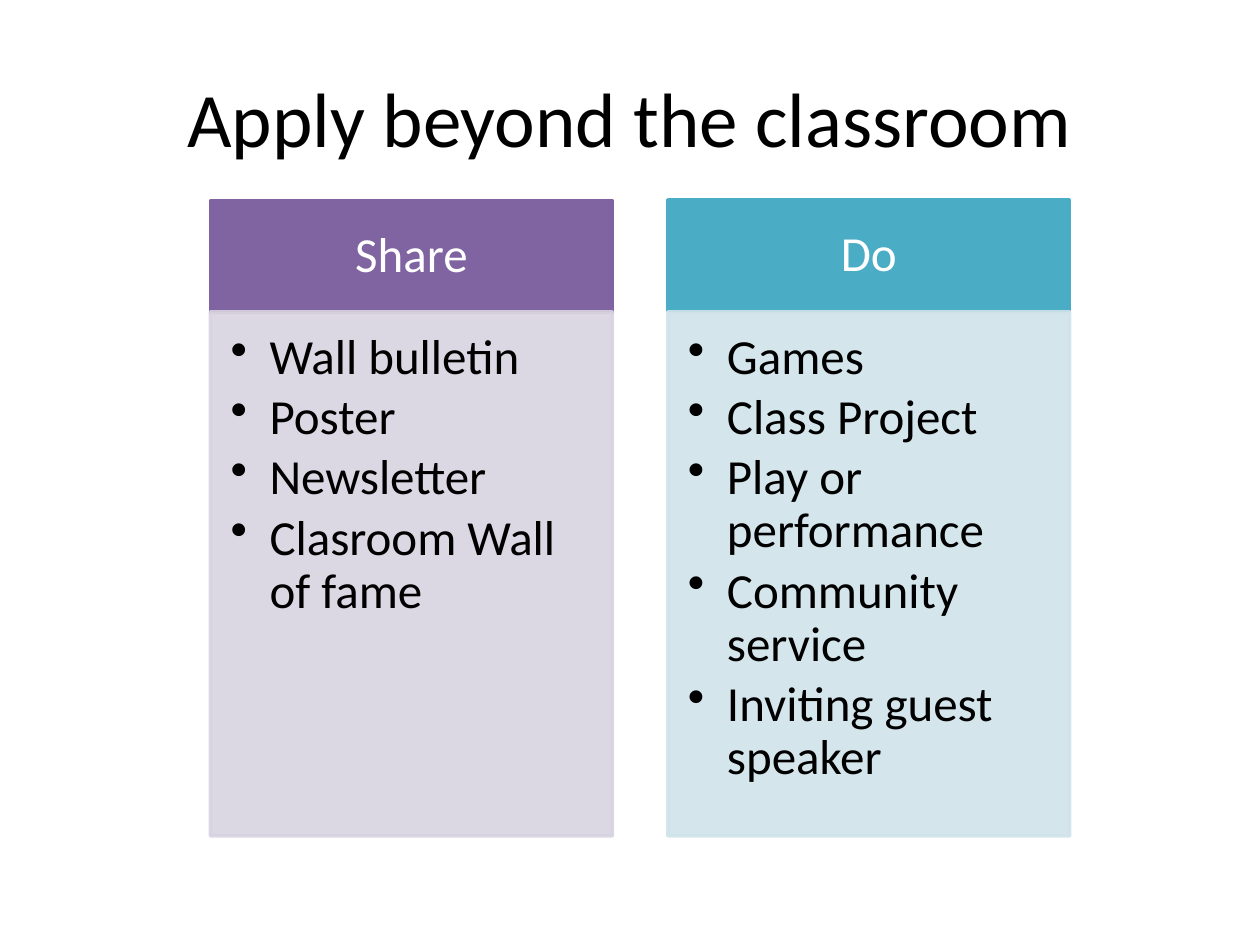
from lxml.etree import SubElement as Sub
from pptx import Presentation
from pptx.dml.color import RGBColor as Rgb
from pptx.enum.shapes import MSO_SHAPE as Kind
from pptx.enum.text import MSO_ANCHOR as Anchor, PP_ALIGN as Align
from pptx.oxml.ns import qn
from pptx.util import Inches as In, Pt

WIDE, HIGH = 10, 7.5
LEFT, STEP, SPAN = WIDE * 0.167, WIDE * 0.363, WIDE * 0.319
HEAD, BODY = 0.88, 4.16
BASE = HIGH * 0.33
FONT = "Calibri"
HUES = {
    "ink": "000000", "white": "FFFFFF",
    "plum": "8064A2", "lilac": "D8D3E0",
    "teal": "4BACC6", "ice": "D0E3EA",
}
COLS = [
    ("Share", "plum", "lilac", 0,
     ["Wall bulletin", "Poster", "Newsletter", "Clasroom Wall of fame"]),
    ("Do", "teal", "ice", 0.01,
     ["Games", "Class Project", "Play or performance",
      "Community service", "Inviting guest speaker"]),
]


def color(name):
    """Return the named colour."""
    return Rgb.from_string(HUES[name])


def write(shape, lines, size, hue, align, anchor, pads):
    """Fill a shape with formatted paragraphs and return them."""
    frame = shape.text_frame
    frame.word_wrap = True
    frame.vertical_anchor = anchor
    (frame.margin_left, frame.margin_top,
     frame.margin_right, frame.margin_bottom) = map(In, pads)
    frame.text = "\n".join(lines)
    for para in frame.paragraphs:
        para.alignment = align
        for run in para.runs:
            run.font.name = FONT
            run.font.size = Pt(size)
            run.font.color.rgb = color(hue)
    return frame.paragraphs


def panel(slide, box, hue, alpha=100):
    """Draw a flat rectangle whose outline matches its fill."""
    shape = slide.shapes.add_shape(Kind.RECTANGLE, *map(In, box))
    shape.shadow.inherit = False
    shape.fill.solid()
    shape.fill.fore_color.rgb = color(hue)
    shape.line.color.rgb = color(hue)
    shape.line.width = Pt(2)
    if alpha < 100:
        for node in shape.element.iter(qn("a:srgbClr")):
            Sub(node, qn("a:alpha"), val=str(alpha * 1000))
    return shape


def bullet(para):
    """Give a paragraph a hanging round bullet."""
    prop = para._p.get_or_add_pPr()
    prop.set("marL", str(In(0.31)))
    prop.set("indent", str(-In(0.31)))
    Sub(prop, qn("a:buChar"), char="•")


def title(slide, box, text):
    """Place the centred slide title."""
    area = slide.shapes.add_textbox(*map(In, box))
    write(area, [text], 44, "ink", Align.CENTER, Anchor.MIDDLE,
          (0.1, 0.05, 0.1, 0.05))


def column(slide, box, name, dark, pale, lift, items):
    """Place a heading bar over a bulleted panel."""
    x, y, w, h = box
    top = panel(slide, (x, y - lift, w, HEAD), dark)
    for para in write(top, [name], 28, "white", Align.CENTER, Anchor.MIDDLE,
                      (0.22, 0.12, 0.22, 0.12)):
        para.line_spacing = 0.9
    low = panel(slide, (x, y + HEAD, w, h - HEAD), pale, 90)
    for para in write(low, items, 28, "ink", Align.LEFT, Anchor.TOP,
                      (0.16, 0.16, 0.22, 0.24)):
        para.line_spacing = 0.9
        para.space_after = Pt(28 * 0.15)
        para.level = 1
        bullet(para)


def main():
    """Build and save the slide."""
    deck = Presentation()
    deck.slide_width, deck.slide_height = In(WIDE), In(HIGH)
    slide = deck.slides.add_slide(deck.slide_layouts[6])
    title(slide, (WIDE * 0.05, HIGH * 0.04, WIDE * 0.9, HIGH / 6),
          "Apply beyond the classroom")
    for i, col in enumerate(COLS):
        box = (LEFT + i * STEP, BASE - HEAD, SPAN, HEAD + BODY)
        column(slide, box, *col)
    deck.save("out.pptx")


if __name__ == "__main__":
    main()
